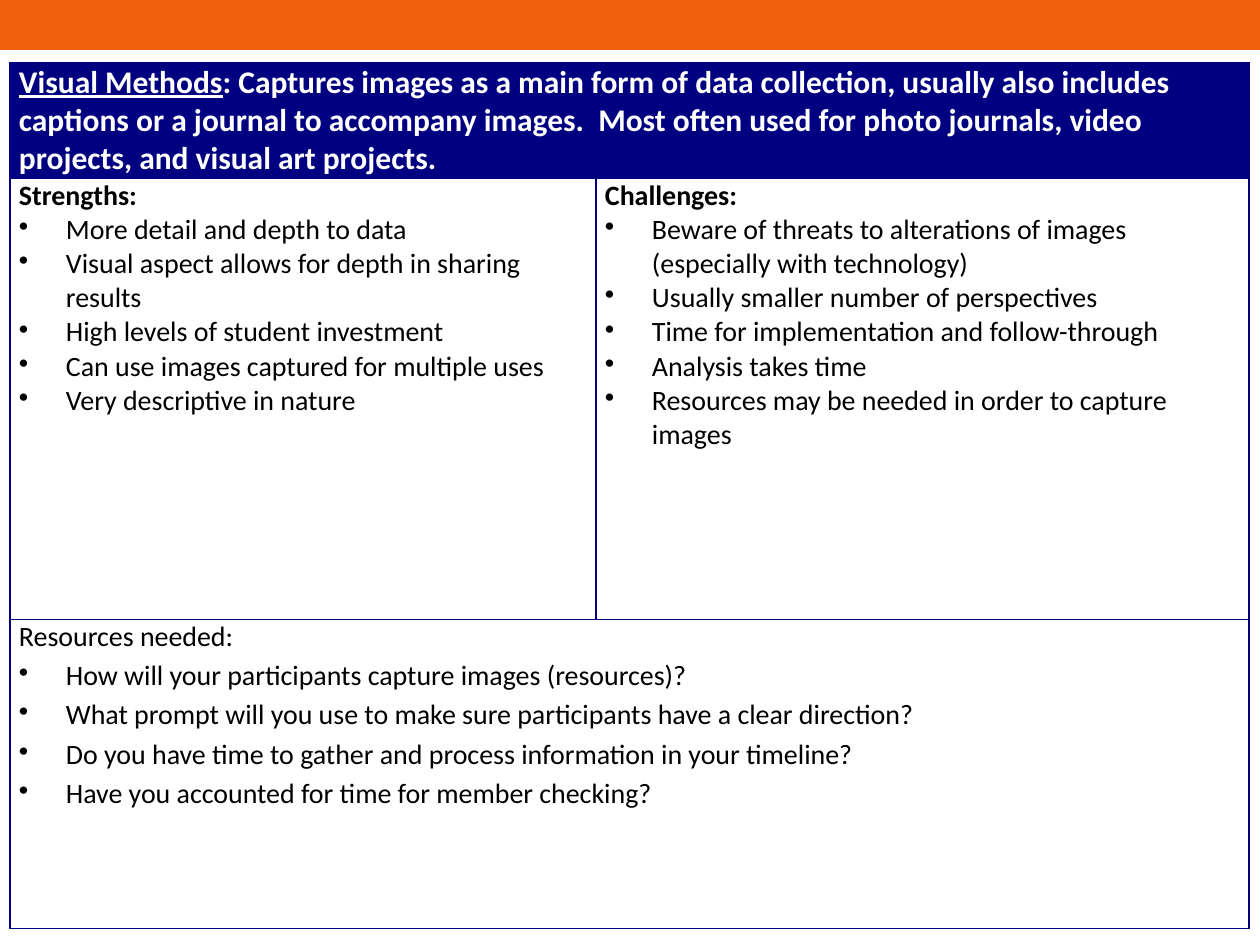
from dataclasses import dataclass

import lxml.etree
import pptx
import pptx.dml.color
import pptx.enum.shapes
import pptx.enum.text
import pptx.oxml.ns
import pptx.util

RGBColor = pptx.dml.color.RGBColor
ORANGE = RGBColor(0xEF, 0x62, 0x0B)
NAVY = RGBColor(0x00, 0x00, 0x80)
WHITE = RGBColor(0xFF, 0xFF, 0xFF)
BLACK = RGBColor(0x00, 0x00, 0x00)

FONT = "Calibri"
PX_PER_INCH = 126
SLIDE_WIDTH, SLIDE_HEIGHT = 1260, 945
BAND_HEIGHT = 50
TABLE_LEFT, TABLE_TOP = 10, 63
COLUMN_WIDTHS = (586, 653)
ROW_HEIGHTS = (115, 441, 309)
CELL_MARGIN = 9
BULLET_INDENT = 47


@dataclass(frozen=True)
class Section:
    row: int
    column: int
    heading: str
    bullets: tuple[str, ...]
    bold_heading: bool = True
    bullet_spacing: float = 1.0


SECTIONS = (
    Section(1, 0, "Strengths:", (
        "More detail and depth to data",
        "Visual aspect allows for depth in sharing results",
        "High levels of student investment",
        "Can use images captured for multiple uses",
        "Very descriptive in nature",
    )),
    Section(1, 1, "Challenges:", (
        "Beware of threats to alterations of images (especially with technology)",
        "Usually smaller number of perspectives",
        "Time for implementation and follow-through",
        "Analysis takes time",
        "Resources may be needed in order to capture images",
    )),
    Section(2, 0, "Resources needed:", (
        "How will your participants capture images (resources)?",
        "What prompt will you use to make sure participants have a clear direction?",
        "Do you have time to gather and process information in your timeline?",
        "Have you accounted for time for member checking?",
    ), bold_heading=False, bullet_spacing=1.15),
)


def px(length: int) -> int:
    return round(pptx.util.Inches(1) * length / PX_PER_INCH)


def add_text(para, text: str, *, size: int = 16, color: RGBColor = BLACK,
             bold: bool = False, underline: bool = False) -> None:
    span = para.add_run()
    span.text = text
    span.font.name = FONT
    span.font.size = pptx.util.Pt(size)
    span.font.color.rgb = color
    span.font.bold = bold
    span.font.underline = underline


def set_bullet(para, spacing: float) -> None:
    para.line_spacing = spacing
    properties = para._p.get_or_add_pPr()
    properties.set("marL", str(px(BULLET_INDENT)))
    properties.set("indent", str(-px(BULLET_INDENT)))
    bullet = lxml.etree.SubElement(properties, pptx.oxml.ns.qn("a:buChar"))
    bullet.set("char", "•")


def set_borders(cell, color: RGBColor) -> None:
    properties = cell._tc.get_or_add_tcPr()
    for index, side in enumerate(("lnL", "lnR", "lnT", "lnB")):
        line = lxml.etree.Element(pptx.oxml.ns.qn(f"a:{side}"),
                                  w=str(pptx.util.Pt(1)))
        fill = lxml.etree.SubElement(line, pptx.oxml.ns.qn("a:solidFill"))
        lxml.etree.SubElement(fill, pptx.oxml.ns.qn("a:srgbClr"), val=str(color))
        properties.insert(index, line)


def style_cell(cell, fill: RGBColor) -> None:
    cell.fill.solid()
    cell.fill.fore_color.rgb = fill
    cell.margin_left = cell.margin_right = px(CELL_MARGIN)
    cell.margin_top = cell.margin_bottom = 0
    cell.vertical_anchor = pptx.enum.text.MSO_ANCHOR.TOP
    set_borders(cell, NAVY)


def fill_section(table, section: Section) -> None:
    frame = table.cell(section.row, section.column).text_frame
    add_text(frame.paragraphs[0], section.heading, bold=section.bold_heading)
    for text in section.bullets:
        para = frame.add_paragraph()
        set_bullet(para, section.bullet_spacing)
        add_text(para, text)


def add_band(page) -> None:
    band = page.shapes.add_shape(pptx.enum.shapes.MSO_SHAPE.RECTANGLE,
                                 0, 0, px(SLIDE_WIDTH), px(BAND_HEIGHT))
    band.shadow.inherit = False
    band.fill.solid()
    band.fill.fore_color.rgb = ORANGE
    band.line.fill.background()


def add_methods_table(page) -> None:
    table = page.shapes.add_table(
        len(ROW_HEIGHTS), len(COLUMN_WIDTHS), px(TABLE_LEFT), px(TABLE_TOP),
        px(sum(COLUMN_WIDTHS)), px(sum(ROW_HEIGHTS))).table
    table.first_row = table.horz_banding = False
    for column, width in zip(table.columns, COLUMN_WIDTHS):
        column.width = px(width)
    for index, (row, height) in enumerate(zip(table.rows, ROW_HEIGHTS)):
        row.height = px(height)
        for cell in row.cells:
            style_cell(cell, NAVY if index == 0 else WHITE)

    # The heading and the resources run across both columns
    for row in (0, 2):
        table.cell(row, 0).merge(table.cell(row, 1))

    heading = table.cell(0, 0).text_frame.paragraphs[0]
    add_text(heading, "Visual Methods", size=18, color=WHITE, bold=True,
             underline=True)
    add_text(heading, ": Captures images as a main form of data collection, "
             "usually also includes captions or a journal to accompany images.  "
             "Most often used for photo journals, video projects, and visual "
             "art projects.", size=18, color=WHITE, bold=True)
    for section in SECTIONS:
        fill_section(table, section)


def main() -> None:
    deck = pptx.Presentation()
    deck.slide_width, deck.slide_height = px(SLIDE_WIDTH), px(SLIDE_HEIGHT)
    page = deck.slides.add_slide(deck.slide_layouts[6])
    add_band(page)
    add_methods_table(page)
    deck.save("out.pptx")


if __name__ == "__main__":
    main()
